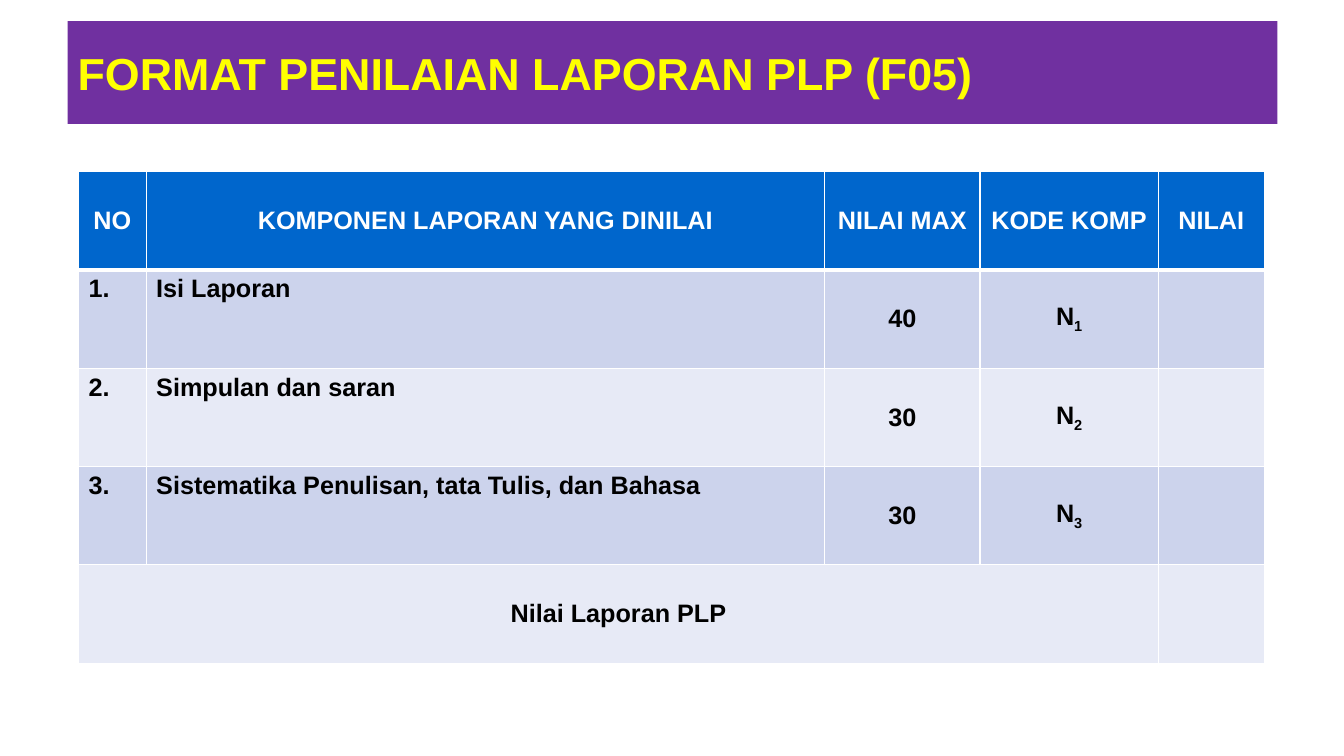
"""Build the PLP report assessment slide with its scoring table."""
from dataclasses import dataclass

from lxml.etree import SubElement
from pptx import Presentation
from pptx.dml.color import RGBColor as RGB
from pptx.enum.text import MSO_ANCHOR as ANCHOR, MSO_AUTO_SIZE as AUTO, PP_ALIGN as ALIGN
from pptx.oxml.ns import qn
from pptx.util import Inches, Pt


@dataclass(frozen=True)
class Theme:
    font: str = "Arial"
    title_size: int = 32
    table_size: int = 18
    banner: str = "7030A0"
    title: str = "FFFF00"
    header: str = "0066CC"
    bands: tuple = ("E7EAF6", "CCD3EC")
    white: str = "FFFFFF"
    black: str = "000000"


THEME = Theme()


def set_font(p, size, color):
    p.font.name, p.font.size, p.font.bold = THEME.font, Pt(size), True
    p.font.color.rgb = RGB.from_string(color)


def add_border(cell, side, width):
    ln = SubElement(cell._tc.get_or_add_tcPr(), qn(f"a:ln{side}"), w=str(Pt(width)))
    SubElement(SubElement(ln, qn("a:solidFill")), qn("a:srgbClr"), val=THEME.white)


prs = Presentation()
prs.slide_width, prs.slide_height = Inches(13.33), Inches(7.5)
s = prs.slides.add_slide(prs.slide_layouts[5])

title = s.shapes.title
title.left, title.top, title.width, title.height = map(Inches, (0.67, 0.21, 12, 1.02))
title.fill.solid()
title.fill.fore_color.rgb = RGB.from_string(THEME.banner)
tf = title.text_frame
tf.text = "FORMAT PENILAIAN LAPORAN PLP (F05)"
tf.auto_size, tf.word_wrap, tf.vertical_anchor = AUTO.NONE, True, ANCHOR.MIDDLE
p = tf.paragraphs[0]
p.alignment = ALIGN.LEFT
set_font(p, THEME.title_size, THEME.title)

rows = [
    ["NO", "KOMPONEN LAPORAN YANG DINILAI", "NILAI MAX", "KODE KOMP", "NILAI"],
    ["1.", "Isi Laporan", "40", "N", ""],
    ["2.", "Simpulan dan saran", "30", "N", ""],
    ["3.", "Sistematika Penulisan, tata Tulis, dan Bahasa", "30", "N", ""],
    ["Nilai Laporan PLP", "", "", "", ""],
]
col_widths = [0.67, 6.73, 1.54, 1.77, 1.05]
total_row, code_col = len(rows) - 1, 3

frame = s.shapes.add_table(len(rows), len(col_widths), Inches(0.78), Inches(1.7),
                           Inches(11.76), Inches(4.88))
table = frame.table
for col, width in zip(table.columns, col_widths):
    col.width = Inches(width)

for i, texts in enumerate(rows):
    table.rows[i].height = Inches(4.88 / len(rows))
    for j, text in enumerate(texts):
        cell = table.cell(i, j)
        for side in "LRTB":
            thick = (i, side) in ((0, "B"), (1, "T"))
            add_border(cell, side, 3 if thick else 1)
        cell.fill.solid()
        cell.fill.fore_color.rgb = RGB.from_string(THEME.bands[i % 2] if i else THEME.header)
        p = cell.text_frame.paragraphs[0]
        set_font(p, THEME.table_size, THEME.black if i else THEME.white)
        if i in (0, total_row) or j > 1:
            p.alignment, cell.vertical_anchor = ALIGN.CENTER, ANCHOR.MIDDLE
        if text:
            p.add_run().text = text
        if j == code_col and 0 < i < total_row:
            r = p.add_run()
            r.text = str(i)
            r._r.get_or_add_rPr().set("baseline", "-25000")

table.cell(total_row, 0).merge(table.cell(total_row, code_col))

prs.save("out.pptx")
